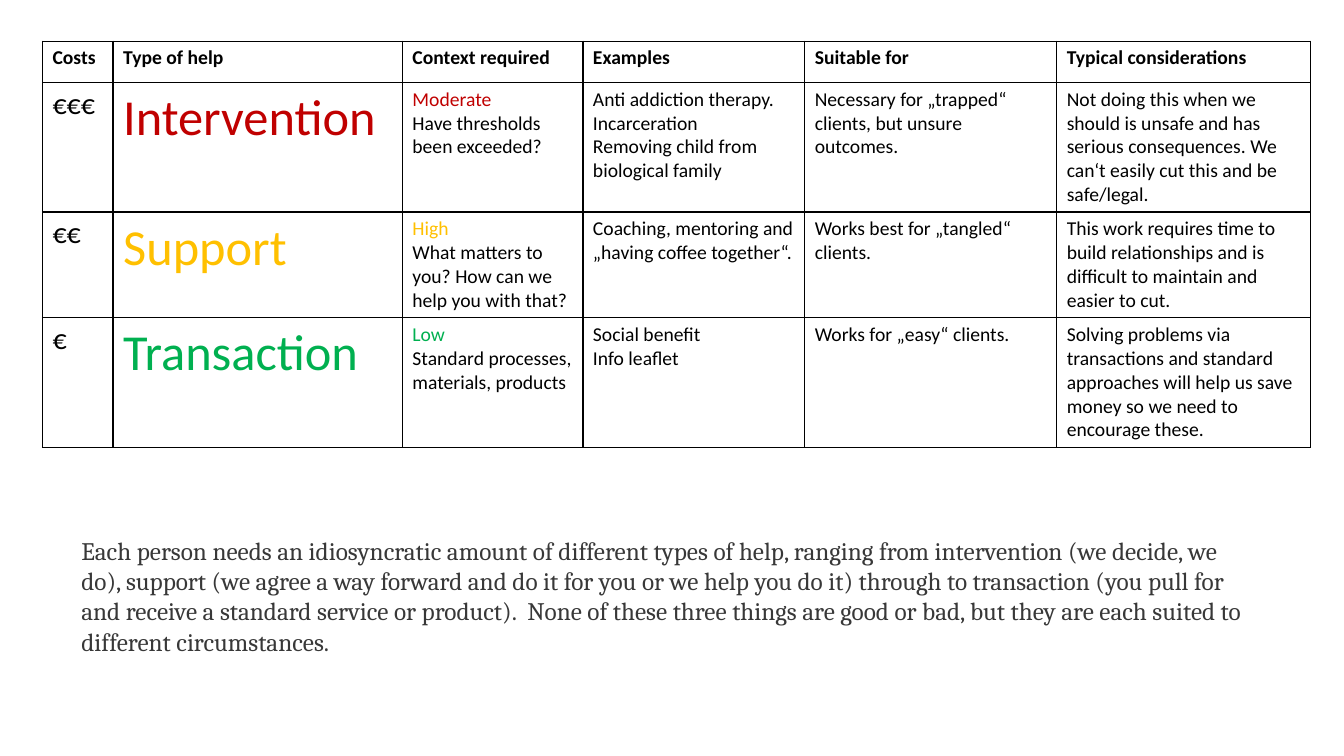
import pptx
import pptx.dml.color
import pptx.enum.text
import pptx.oxml
import pptx.oxml.ns
import pptx.util

Cm = pptx.util.Cm
BLACK = "000000"


def color(value):
    return pptx.dml.color.RGBColor.from_string(value)


def add_span(para, text, size, ink=BLACK, font="Calibri", bold=False):
    span = para.add_run()
    span.text = text
    span.font.color.rgb = color(ink)
    settings = {"name": font, "size": pptx.util.Pt(size), "bold": bold}
    for name, value in settings.items():
        setattr(span.font, name, value)


deck = pptx.Presentation()
deck.slide_width, deck.slide_height = Cm(33.87), Cm(19.05)
page = deck.slides.add_slide(deck.slide_layouts[6])

# Table content
headings = ["Costs", "Type of help", "Context required", "Examples",
            "Suitable for", "Typical considerations"]
help_types = [
    ("€€€", "Intervention", "C00000", "Moderate",
     "Have thresholds been exceeded?",
     ["Anti addiction therapy.", "Incarceration",
      "Removing child from biological family"],
     "Necessary for „trapped“ clients, but unsure outcomes.",
     "Not doing this when we should is unsafe and has serious consequences. "
     "We can‘t easily cut this and be safe/legal."),
    ("€€", "Support", "FFC000", "High",
     "What matters to you? How can we help you with that?",
     ["Coaching, mentoring and „having coffee together“."],
     "Works best for „tangled“ clients.",
     "This work requires time to build relationships and is difficult "
     "to maintain and easier to cut."),
    ("€", "Transaction", "00B050", "Low",
     "Standard processes, materials, products",
     ["Social benefit", "Info leaflet"],
     "Works for „easy“ clients.",
     "Solving problems via transactions and standard approaches will help us "
     "save money so we need to encourage these."),
]

# Table grid
widths = [1.78, 7.29, 4.55, 5.59, 6.35, 6.4]
heights = [1.04, 3.25, 2.67, 3.25]
table = page.shapes.add_table(len(heights), len(widths), Cm(1.07), Cm(1.04),
                              Cm(sum(widths)), Cm(sum(heights))).table
table.first_row = table.horz_banding = False
for column, width in zip(table.columns, widths):
    column.width = Cm(width)
for row, height in zip(table.rows, heights):
    row.height = Cm(height)

# Thin black borders and no fill
for cell in table.iter_cells():
    properties = cell._tc.get_or_add_tcPr()
    for side in "LRTB":
        properties.append(pptx.oxml.parse_xml(
            f'<a:ln{side} {pptx.oxml.ns.nsdecls("a")} w="12700"><a:solidFill>'
            f'<a:srgbClr val="{BLACK}"/></a:solidFill></a:ln{side}>'))
    cell.fill.background()

# Header row
for index, heading in enumerate(headings):
    add_span(table.cell(0, index).text_frame.paragraphs[0], heading, 14, bold=True)

# One row for each type of help
for number, entry in enumerate(help_types, start=1):
    costs, kind, ink, level, question, examples, clients, considerations = entry
    frames = [table.cell(number, index).text_frame for index in range(len(widths))]
    paras = [frame.paragraphs[0] for frame in frames]
    add_span(paras[0], costs, 20)
    add_span(paras[1], kind, 36, ink)
    add_span(paras[2], level, 14, ink)
    paras[2].add_line_break()
    add_span(paras[2], question, 14)
    add_span(paras[3], examples[0], 14)
    for example in examples[1:]:
        add_span(frames[3].add_paragraph(), example, 14)
    add_span(paras[4], clients, 14)
    add_span(paras[5], considerations, 14)

# Explanation below the table
box = page.shapes.add_textbox(Cm(1.8), Cm(13.36), Cm(30.25), Cm(3.33))
box.text_frame.word_wrap = True
box.text_frame.auto_size = pptx.enum.text.MSO_AUTO_SIZE.SHAPE_TO_FIT_TEXT
add_span(box.text_frame.paragraphs[0],
         "Each person needs an idiosyncratic amount of different types of help, "
         "ranging from intervention (we decide, we do), support (we agree a way "
         "forward and do it for you or we help you do it) through to transaction "
         "(you pull for and receive a standard service or product).  None of "
         "these three things are good or bad, but they are each suited to "
         "different circumstances.", 18, "383838", "Cambria")

deck.save("out.pptx")
